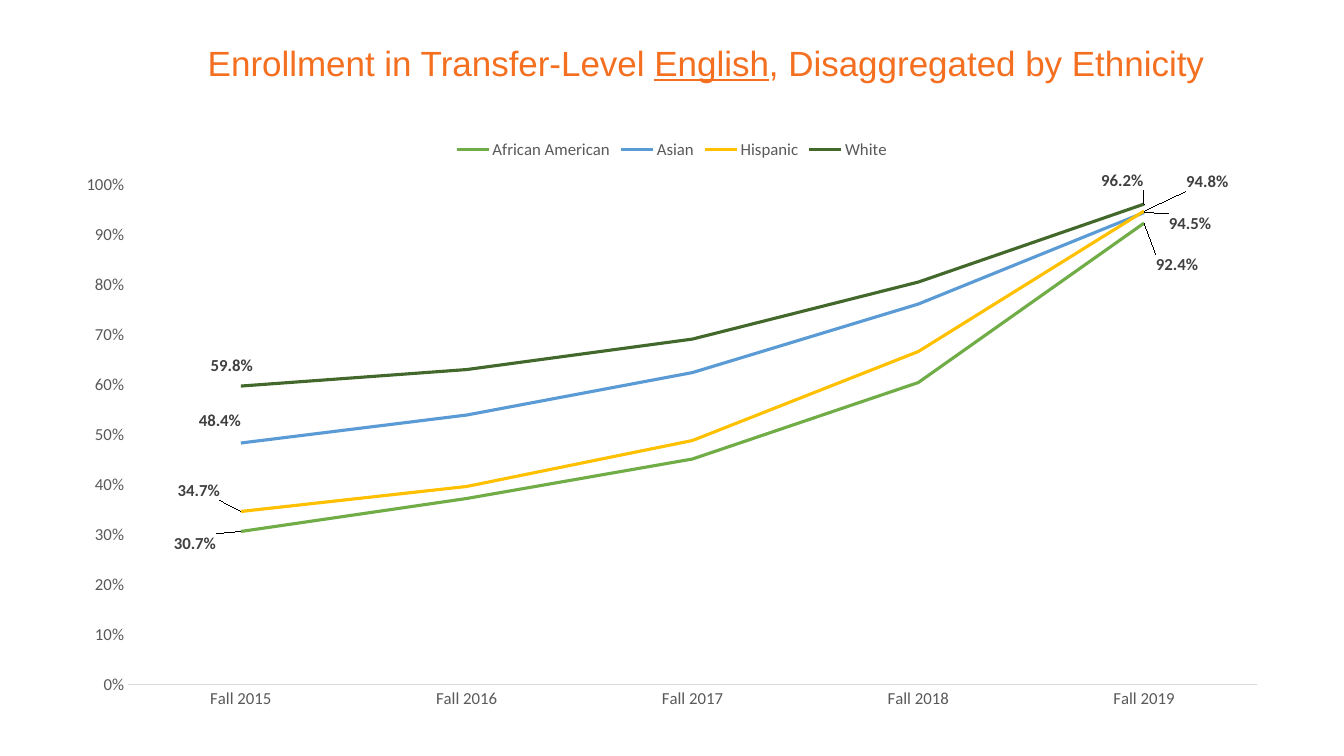
from dataclasses import dataclass

from lxml import etree
from pptx import Presentation
from pptx import util as u
from pptx.chart.data import CategoryChartData
from pptx.dml.color import RGBColor
from pptx.enum import chart as ch, text
from pptx.oxml import parse_xml
from pptx.oxml.ns import qn


@dataclass
class Theme:
    head: str = "F46F1F"
    axis: str = "595959"
    rule: str = "D9D9D9"
    label: str = "404040"
    body: str = "Calibri"
    title: str = "Arial"
    big: int = 25
    small: int = 12


theme = Theme()
TERMS = ["Fall 2015", "Fall 2016", "Fall 2017", "Fall 2018", "Fall 2019"]
GROUPS = [
    ("African American", "70AD47", (0.307, 0.373, 0.452, 0.605, 0.924),
     {0: (-1.16, 0.66), 4: (0.83, 1.39)}),
    ("Asian", "5B9BD5", (0.484, 0.54, 0.625, 0.762, 0.945),
     {0: (-0.53, -0.2), 4: (1.16, 0.63)}),
    ("Hispanic", "FFC000", (0.347, 0.397, 0.489, 0.667, 0.948),
     {0: (-1.06, -0.18), 4: (1.59, -0.4)}),
    ("White", "43682B", (0.598, 0.631, 0.692, 0.806, 0.962),
     {0: (-0.23, -0.15), 4: (-0.55, -0.25)}),
]
LEADERS = (
    '<c:extLst xmlns:c="http://schemas.openxmlformats.org/drawingml/2006/chart">'
    '<c:ext uri="{CE6537A1-D6FC-4f65-9D91-7224C49458BB}" '
    'xmlns:c15="http://schemas.microsoft.com/office/drawing/2012/chart">'
    '<c15:showLeaderLines val="1"/></c:ext></c:extLst>'
)


def style(font, face=theme.body, size=theme.small, color=theme.axis, bold=False, under=False):
    font.name = face
    font.size = u.Pt(size)
    font.color.rgb = RGBColor.from_string(color)
    font.bold = bold
    font.underline = under


def write(para, words, **look):
    run = para.add_run()
    run.text = words
    style(run.font, **look)


def layout(**parts):
    node = etree.Element(qn("c:layout"))
    manual = etree.SubElement(node, qn("c:manualLayout"))
    for name, value in parts.items():
        etree.SubElement(manual, qn("c:" + name), val=str(value))
    return node


def title(slide, left, top, width, height):
    box = slide.shapes.add_textbox(u.Cm(left), u.Cm(top), u.Cm(width), u.Cm(height))
    frame = box.text_frame
    frame.word_wrap = True
    frame.vertical_anchor = text.MSO_ANCHOR.MIDDLE
    para = frame.paragraphs[0]
    para.alignment = text.PP_ALIGN.CENTER
    for words, under in (("Enrollment in Transfer-Level ", False), ("English", True),
                         (", Disaggregated by Ethnicity", False)):
        write(para, words, face=theme.title, size=theme.big, color=theme.head, under=under)


def tag(series, index, shift, width, height):
    label = series.points[index].data_label
    style(label.font, color=theme.label, bold=True)
    label.position = ch.XL_LABEL_POSITION.ABOVE
    node = series.data_labels._element.find(f"{qn('c:dLbl')}[{qn('c:idx')}][last()]")
    node.insert(1, layout(x=round(shift[0] / width, 4), y=round(shift[1] / height, 4)))
    node.insert(2, etree.Element(qn("c:numFmt"), formatCode="0.0%", sourceLinked="0"))


def trend(slide, left, top, width, height):
    data = CategoryChartData(number_format="0.0%")
    data.categories = TERMS
    for name, _, values, _ in GROUPS:
        data.add_series(name, values)
    chart = slide.shapes.add_chart(
        ch.XL_CHART_TYPE.LINE, u.Cm(left), u.Cm(top), u.Cm(width), u.Cm(height), data).chart
    style(chart.font)
    chart.has_title = False
    chart.has_legend = True
    chart.legend.position = ch.XL_LEGEND_POSITION.TOP
    chart.legend.include_in_layout = False
    style(chart.legend.font)

    for axis in (chart.category_axis, chart.value_axis):
        axis.has_major_gridlines = False
        axis.major_tick_mark = axis.minor_tick_mark = ch.XL_TICK_MARK.NONE
        style(axis.tick_labels.font)
    chart.category_axis.format.line.color.rgb = RGBColor.from_string(theme.rule)
    chart.category_axis.format.line.width = u.Pt(0.75)
    scale = chart.value_axis
    scale.minimum_scale, scale.maximum_scale, scale.major_unit = 0, 1, 0.1
    scale.tick_labels.number_format = "0%"
    scale.tick_labels.number_format_is_linked = False
    scale.format.line.fill.background()

    plot = chart.plots[0]
    plot.vary_by_categories = False
    for series, (_, color, _, shifts) in zip(plot.series, GROUPS):
        series.smooth = False
        series.marker.style = ch.XL_MARKER_STYLE.NONE
        series.format.line.color.rgb = RGBColor.from_string(color)
        series.format.line.width = u.Pt(2.25)
        series.data_labels.show_value = False
        for index, shift in shifts.items():
            tag(series, index, shift, width, height)
        series.data_labels._element.append(parse_xml(LEADERS))

    area = chart._chartSpace.chart.plotArea
    for old in area.findall(qn("c:layout")):
        area.remove(old)
    area.insert(0, layout(layoutTarget="inner", xMode="edge", yMode="edge",
                          x=0.0545, y=0.096, w=0.925, h=0.842))


def main():
    deck = Presentation()
    deck.slide_width, deck.slide_height = u.Cm(33.87), u.Cm(19.05)
    slide = deck.slides.add_slide(deck.slide_layouts[6])
    title(slide, 2.55, 0.5, 30.48, 2.15)
    trend(slide, 1.55, 3.23, 30.76, 14.96)
    deck.save("out.pptx")


if __name__ == "__main__":
    main()
